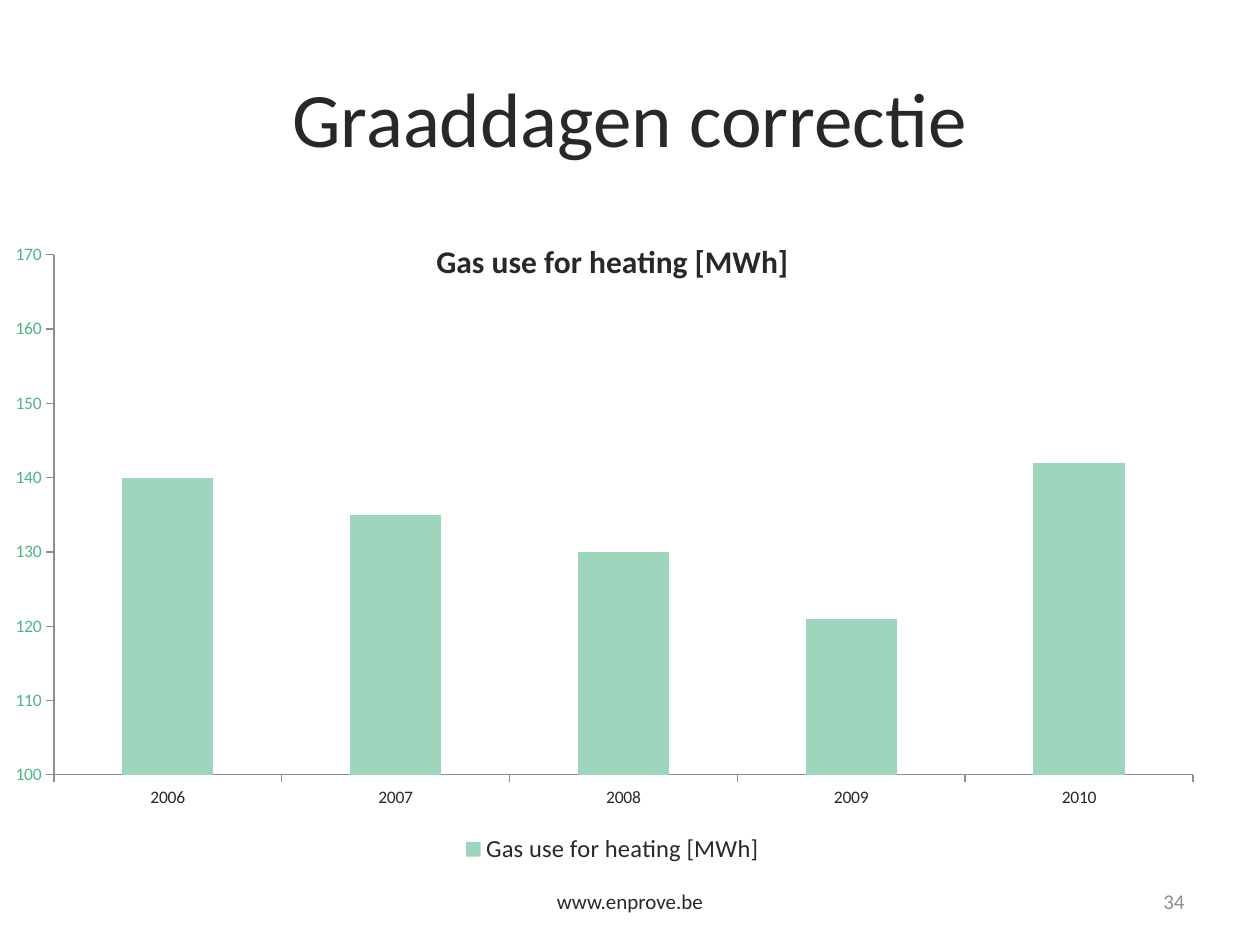
from lxml.etree import SubElement
from pptx import Presentation
from pptx.chart.data import CategoryChartData
from pptx.dml.color import RGBColor
from pptx.enum.chart import XL_CHART_TYPE as ChartType, XL_LEGEND_POSITION as LegendPos
from pptx.enum.chart import XL_TICK_MARK as Tick
from pptx.enum.text import MSO_ANCHOR as Anchor, PP_ALIGN as Align
from pptx.oxml.ns import qn
from pptx.util import Pt

INK = RGBColor(0x26, 0x29, 0x2C)
GRAY = RGBColor(0x8E, 0x8E, 0x8F)
GREEN = RGBColor(0x50, 0xB4, 0x87)
MINT = RGBColor(0x9E, 0xD5, 0xBC)
FONT = "Calibri"

TITLE = "Graaddagen correctie"
SERIES = "Gas use for heating [MWh]"
GAS_USE = {"2006": 140, "2007": 135, "2008": 130, "2009": 121, "2010": 142}
PLOT = {"x": 0.044, "y": 0.062, "w": 0.93, "h": 0.794}
FOOTER = [  # text, left, width, alignment, colour
    ("www.enprove.be", 246, 228, Align.CENTER, INK),
    ("34", 516, 168, Align.RIGHT, GRAY),
]


def set_font(font, size, color=INK, bold=False):
    font.name, font.size, font.bold = FONT, Pt(size), bold
    font.color.rgb = color


def write(shape, text, size, align, color=INK):
    tf = shape.text_frame
    tf.word_wrap = True
    tf.vertical_anchor = Anchor.MIDDLE
    p = tf.paragraphs[0]
    p.text, p.alignment = text, align
    set_font(p.font, size, color)


def place_plot(chart):
    """Fix the inner plot area as fractions of the chart."""
    area = chart.plots[0]._element.getparent()
    layout = area.find(qn("c:layout"))
    if layout is None:
        layout = SubElement(area, qn("c:layout"))
        area.insert(0, layout)
    manual = SubElement(layout, qn("c:manualLayout"))
    settings = {"layoutTarget": "inner", "xMode": "edge", "yMode": "edge", **PLOT}
    for tag, value in settings.items():
        SubElement(manual, qn(f"c:{tag}")).set("val", str(value))


def add_gas_chart(s):
    data = CategoryChartData()
    data.categories = list(GAS_USE)
    data.add_series(SERIES, list(GAS_USE.values()))
    chart = s.shapes.add_chart(ChartType.COLUMN_CLUSTERED, Pt(0), Pt(122.4),
                               Pt(700), Pt(374.4), data).chart
    set_font(chart.font, 10)

    chart.has_title = True
    p = chart.chart_title.text_frame.paragraphs[0]
    p.text = SERIES
    set_font(p.font, 18, bold=True)
    chart.chart_title.include_in_layout = True

    chart.has_legend = True
    chart.legend.position = LegendPos.BOTTOM
    chart.legend.include_in_layout = False
    set_font(chart.legend.font, 14)

    plot = chart.plots[0]
    plot.gap_width, plot.vary_by_categories = 150, False
    fill = plot.series[0].format.fill
    fill.solid()
    fill.fore_color.rgb = MINT

    values = chart.value_axis
    values.minimum_scale, values.maximum_scale, values.major_unit = 100, 170, 10
    values.has_major_gridlines = False
    for axis, color in ((chart.category_axis, INK), (values, GREEN)):
        axis.major_tick_mark, axis.minor_tick_mark = Tick.OUTSIDE, Tick.NONE
        axis.format.line.color.rgb = GRAY
        axis.format.line.width = Pt(0.75)
        set_font(axis.tick_labels.font, 10, color)
    place_plot(chart)


prs = Presentation()
prs.slide_width, prs.slide_height = Pt(720), Pt(540)
s = prs.slides.add_slide(prs.slide_layouts[5])

add_gas_chart(s)

title = s.shapes.title
title.left, title.top, title.width, title.height = Pt(36), Pt(21.6), Pt(648), Pt(90)
write(title, TITLE, 44, Align.CENTER)

for text, left, width, align, color in FOOTER:
    box = s.shapes.add_textbox(Pt(left), Pt(500.4), Pt(width), Pt(28.8))
    write(box, text, 12, align, color)

prs.save("out.pptx")
